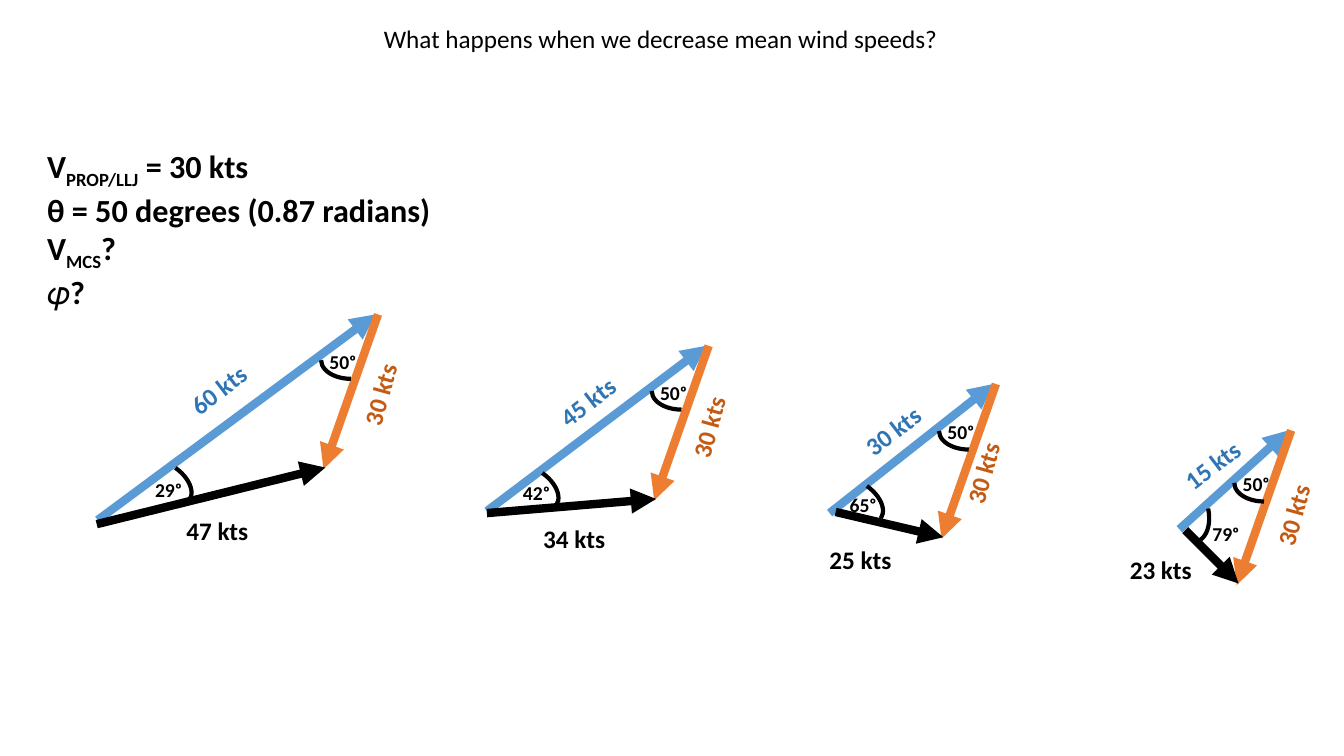
from pptx import Presentation
from pptx.dml.color import RGBColor
from pptx.enum.shapes import MSO_CONNECTOR as Line, MSO_SHAPE as Shape
from pptx.oxml.ns import qn
from pptx.util import Pt
from lxml.etree import SubElement

HEX = {"black": "000000", "blue": "5B9BD5", "orange": "ED7D31",
       "navy": "2E75B5", "rust": "C55A11"}

# All pairs are offsets in points from the apex of the triangle.
FOOT = (-38.9, 110.5)
TIP = (-37.6, 109.4)
WINDS = [
    dict(apex=(270, 224.6), mean="60 kts", storm="47 kts", phi="29ᵒ",
         tail=(-200.2, 146.9), base=(-200.9, 149.8), drop=19.4,
         arc=(-173.5, 107.3), turn=34.5, phi_at=(-166.3, 113),
         mean_at=(-143.3, 38.9), jet_at=(-28.1, 42.5), storm_at=(-144, 139.7)),
    dict(apex=(506.2, 247), mean="45 kts", storm="34 kts", phi="42ᵒ",
         tail=(-158.4, 118.1), base=(-158.4, 119.5), drop=19,
         arc=(-147.6, 88.6), turn=34.5, phi_at=(-139.7, 92.9),
         mean_at=(-115.9, 25.2), jet_at=(-29.5, 43.2), storm_at=(-125.3, 123.1)),
    dict(apex=(711.4, 274.3), mean="30 kts", storm="25 kts", phi="65ᵒ",
         tail=(-118.8, 92.2), base=(-114.5, 91.4), drop=20.2,
         arc=(-121, 70.6), turn=34.5, phi_at=(-111.6, 74.2),
         mean_at=(-103, 18.7), jet_at=(-38.9, 49), storm_at=(-126, 110.9)),
    dict(apex=(922.3, 307.4), mean="15 kts", storm="23 kts", phi="79ᵒ",
         tail=(-79.9, 70.6), base=(-75.6, 71.3), drop=24.2,
         arc=(-93.6, 45.4), turn=77.8, phi_at=(-63.4, 61.9),
         mean_at=(-85.7, 10.1), jet_at=(-28.1, 46.1), storm_at=(-122.4, 85)),
]


def color(name):
    return RGBColor.from_string(HEX[name])


def write(slide, text, box, size=18, ink="black", bold=True, turn=0, wrap=False):
    """Add a text box; parts between bars are subscripts."""
    shape = slide.shapes.add_textbox(*map(Pt, box))
    shape.rotation = turn
    frame = shape.text_frame
    frame.word_wrap = wrap
    for i, row in enumerate(text.split("\n")):
        para = frame.add_paragraph() if i else frame.paragraphs[0]
        for j, part in enumerate(row.split("|")):
            run = para.add_run()
            run.text = part
            font = run.font
            font.name, font.size, font.bold = "Calibri", Pt(size), bold
            font.color.rgb = color(ink)
            if j % 2:
                run._r.get_or_add_rPr().set("baseline", "-25000")


def arrow(slide, start, end, ink):
    line = slide.shapes.add_connector(Line.STRAIGHT, *map(Pt, start + end))
    line.line.color.rgb = color(ink)
    line.line.width = Pt(6)
    SubElement(line.line._get_or_add_ln(), qn("a:tailEnd"), type="triangle")
    SubElement(line._element.spPr, qn("a:effectLst"))


def angle(slide, spot, turn):
    arc = slide.shapes.add_shape(Shape.ARC, *map(Pt, spot + (42.5, 26.6)))
    arc.rotation = turn
    arc.shadow.inherit = False
    arc.fill.background()
    arc.line.color.rgb = color("black")
    arc.line.width = Pt(3)


def triangle(slide, wind):
    """Draw one wind triangle with its angles and labels around its apex."""
    left, top = wind["apex"]

    def at(spot):
        return left + spot[0], top + spot[1]

    def label(text, spot, **style):
        write(slide, text, at(spot) + (59, 28.8), **style)

    def degree(text, spot):
        write(slide, text, at(spot) + (33.8, 24.5), size=14)

    arrow(slide, at(wind["tail"]), at((-1.8, 0)), "blue")
    arrow(slide, at((0, 0)), at(FOOT), "orange")
    arrow(slide, at(wind["base"]), at(TIP), "black")
    angle(slide, at((-40.7, wind["drop"])), 180)
    angle(slide, at(wind["arc"]), wind["turn"])
    degree("50ᵒ", (-41.8, wind["drop"] + 2.2))
    degree(wind["phi"], wind["phi_at"])
    label(wind["mean"], wind["mean_at"], ink="navy", turn=322.6)
    label("30 kts", wind["jet_at"], ink="rust", turn=285.4)
    label(wind["storm"], wind["storm_at"])


def main():
    deck = Presentation()
    deck.slide_width, deck.slide_height = Pt(960), Pt(540)
    slide = deck.slides.add_slide(deck.slide_layouts[6])
    write(slide, "What happens when we decrease mean wind speeds?",
          (267.1, 13, 415.4, 28.8), bold=False)
    write(slide, "V|PROP/LLJ| = 30 kts\nθ = 50 degrees (0.87 radians)\n"
          "V|MCS|?\n𝜑?", (26.6, 100.8, 534.2, 118.8), size=23, wrap=True)
    for wind in WINDS:
        triangle(slide, wind)
    deck.save("out.pptx")


if __name__ == "__main__":
    main()
